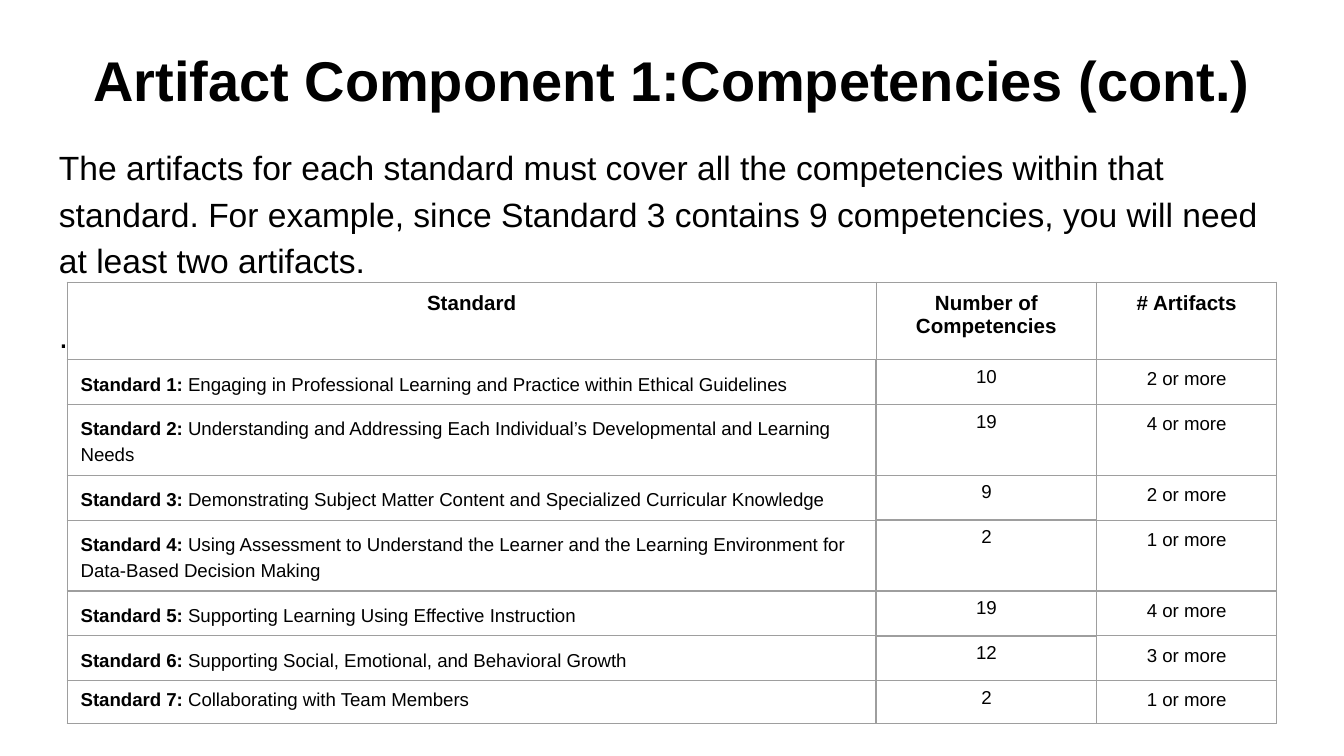
import dataclasses
import typing

import lxml.etree
import pptx
import pptx.dml.color
import pptx.enum.text
import pptx.oxml.ns
import pptx.util

Pt = pptx.util.Pt
CENTER = pptx.enum.text.PP_ALIGN.CENTER
LEFT = pptx.enum.text.PP_ALIGN.LEFT
FONT = "Arial"
BLACK = "000000"
GRID = "9E9E9E"
THIN, THICK = 0.75, 1


@dataclasses.dataclass
class Run:
    text: str
    size: float
    bold: bool = False


@dataclasses.dataclass
class Standard:
    label: str
    description: str
    competencies: int
    minimum_artifacts: int


@dataclasses.dataclass
class CellStyle:
    margin_side: float = 7.2
    margin_end: float = 5.04
    alignment: typing.Any = CENTER
    line_spacing: typing.Optional[float] = None
    space_after: float = 0
    left: float = THIN
    right: float = THIN
    top: float = THIN
    bottom: float = THIN


STANDARDS = [
    Standard("Standard 1: ", "Engaging in Professional Learning and Practice within Ethical Guidelines", 10, 2),
    Standard("Standard 2: ", "Understanding and Addressing Each Individual’s Developmental and Learning Needs", 19, 4),
    Standard("Standard 3: ", "Demonstrating Subject Matter Content and Specialized Curricular Knowledge", 9, 2),
    Standard("Standard 4: ", "Using Assessment to Understand the Learner and the Learning Environment for Data-Based Decision Making", 2, 1),
    Standard("Standard 5:", " Supporting Learning Using Effective Instruction", 19, 4),
    Standard("Standard 6: ", "Supporting Social, Emotional, and Behavioral Growth", 12, 3),
    Standard("Standard 7:", " Collaborating with Team Members", 2, 1),
]
COLUMN_WIDTHS = [433.4, 118.1, 96.5]
ROW_HEIGHTS = [41.5, 22.5] + [23] * 6

HEADER = CellStyle()
COUNT_HEADER = CellStyle(bottom=THICK)
DESCRIPTION = CellStyle(alignment=LEFT, line_spacing=1.25, space_after=8, right=THICK)
LAST_DESCRIPTION = CellStyle(alignment=LEFT, right=THICK)
COUNT = CellStyle(5.04, 3.6, left=THICK, right=THICK, top=THICK, bottom=THICK)
ARTIFACTS = CellStyle(left=THICK)


def color(value: str) -> pptx.dml.color.RGBColor:
    return pptx.dml.color.RGBColor.from_string(value)


def add_runs(paragraph, runs: typing.Sequence[Run]) -> None:
    for item in runs:
        run = paragraph.add_run()
        run.text = item.text
        run.font.name = FONT
        run.font.size = Pt(item.size)
        run.font.bold = item.bold
        run.font.color.rgb = color(BLACK)


def set_frame(text_frame) -> None:
    text_frame.word_wrap = True
    text_frame.auto_size = pptx.enum.text.MSO_AUTO_SIZE.NONE
    text_frame.vertical_anchor = pptx.enum.text.MSO_ANCHOR.TOP
    text_frame.margin_left = text_frame.margin_right = Pt(7.2)
    text_frame.margin_top = text_frame.margin_bottom = Pt(7.2)


def set_borders(cell, style: CellStyle) -> None:
    properties = cell._tc.get_or_add_tcPr()
    widths = {"lnL": style.left, "lnR": style.right, "lnT": style.top, "lnB": style.bottom}
    for index, (tag, width) in enumerate(widths.items()):
        line = lxml.etree.Element(pptx.oxml.ns.qn(f"a:{tag}"), w=str(Pt(width)))
        fill = lxml.etree.SubElement(line, pptx.oxml.ns.qn("a:solidFill"))
        lxml.etree.SubElement(fill, pptx.oxml.ns.qn("a:srgbClr"), val=GRID)
        properties.insert(index, line)


def fill_cell(cell, runs: typing.Sequence[Run], style: CellStyle) -> None:
    cell.fill.background()
    cell.margin_left = cell.margin_right = Pt(style.margin_side)
    cell.margin_top = cell.margin_bottom = Pt(style.margin_end)
    paragraph = cell.text_frame.paragraphs[0]
    paragraph.alignment = style.alignment
    paragraph.line_spacing = style.line_spacing
    paragraph.space_after = Pt(style.space_after)
    add_runs(paragraph, runs)
    set_borders(cell, style)


def add_title(slide) -> None:
    title = slide.shapes.title
    title.left, title.top, title.width, title.height = Pt(24.5), Pt(17.3), Pt(671), Pt(45.4)
    set_frame(title.text_frame)
    paragraph = title.text_frame.paragraphs[0]
    paragraph.alignment = CENTER
    add_runs(paragraph, [Run("Artifact Component 1:Competencies (cont.)", 30, True)])


def add_body(slide) -> None:
    body = slide.shapes.add_textbox(Pt(24.5), Pt(68.4), Pt(671), Pt(294.5))
    set_frame(body.text_frame)
    explanation = body.text_frame.paragraphs[0]
    explanation.line_spacing = 1.15
    explanation.space_before = Pt(12)
    add_runs(explanation, [Run(
        "The artifacts for each standard must cover all the competencies within that standard. "
        "For example, since Standard 3 contains 9 competencies, you will need at least two artifacts.", 18)])
    ending = body.text_frame.add_paragraph()
    ending.line_spacing = 1.3
    ending.space_before = Pt(12)
    add_runs(ending, [Run(".", 18)])


def add_standards_table(slide) -> None:
    frame = slide.shapes.add_table(
        len(ROW_HEIGHTS), len(COLUMN_WIDTHS), Pt(36), Pt(151.2), Pt(sum(COLUMN_WIDTHS)), Pt(sum(ROW_HEIGHTS)))
    table = frame.table
    table.first_row = table.horz_banding = False
    for column, width in zip(table.columns, COLUMN_WIDTHS):
        column.width = Pt(width)
    for row, height in zip(table.rows, ROW_HEIGHTS):
        row.height = Pt(height)
    headings = ["Standard", "Number of Competencies", "# Artifacts"]
    for index, (heading, style) in enumerate(zip(headings, [HEADER, COUNT_HEADER, HEADER])):
        fill_cell(table.cell(0, index), [Run(heading, 11, True)], style)
    for index, standard in enumerate(STANDARDS, 1):
        style = LAST_DESCRIPTION if index == len(STANDARDS) else DESCRIPTION
        fill_cell(table.cell(index, 0), [Run(standard.label, 10, True), Run(standard.description, 10)], style)
        fill_cell(table.cell(index, 1), [Run(str(standard.competencies), 10)], COUNT)
        fill_cell(table.cell(index, 2), [Run(f"{standard.minimum_artifacts} or more", 10)], ARTIFACTS)


def main() -> None:
    presentation = pptx.Presentation()
    presentation.slide_width, presentation.slide_height = Pt(720), Pt(405)
    slide = presentation.slides.add_slide(presentation.slide_layouts[5])
    add_title(slide)
    add_body(slide)
    add_standards_table(slide)
    presentation.save("out.pptx")


if __name__ == "__main__":
    main()
